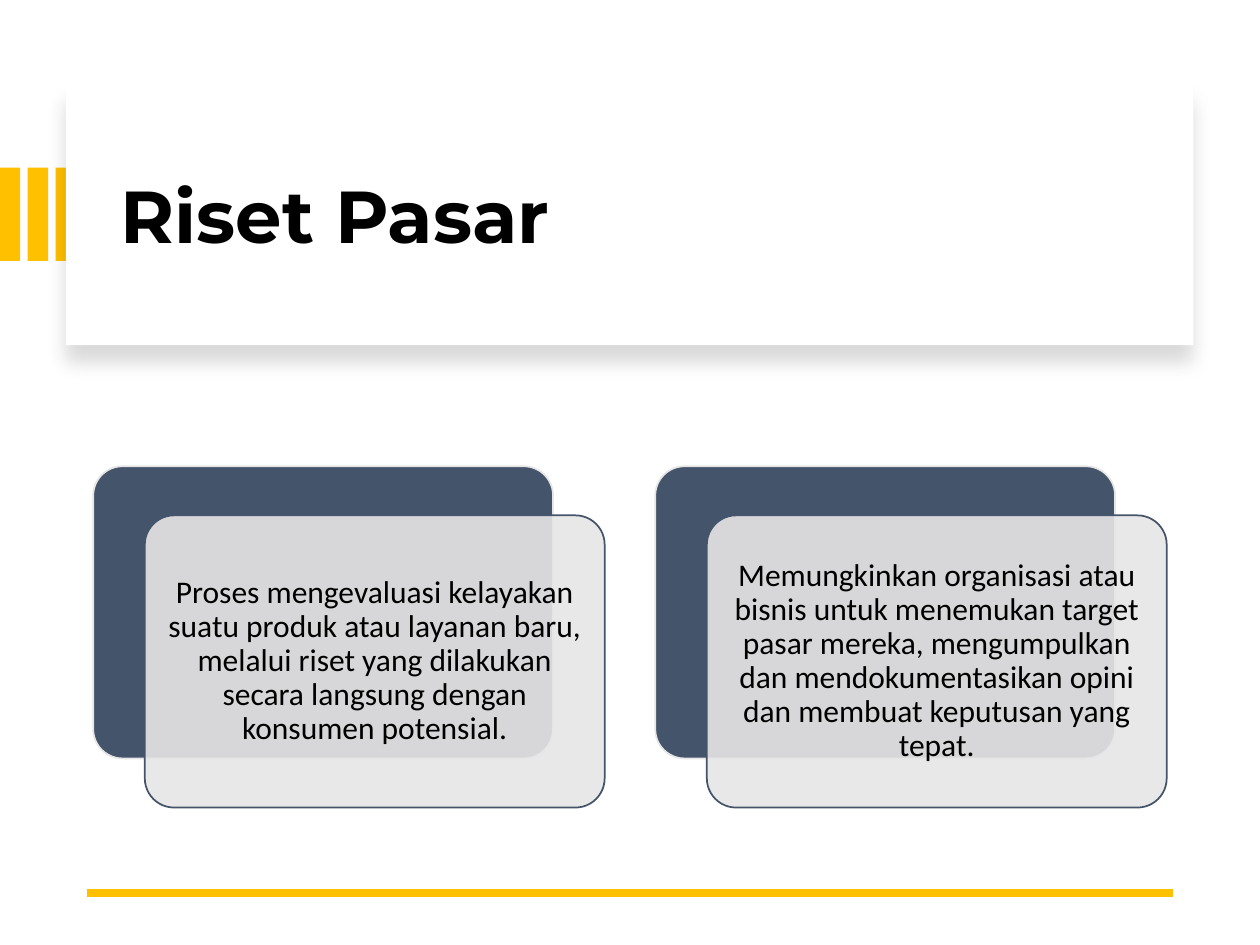
"""Build the "Riset Pasar" slide: a title panel above two layered text cards."""
from lxml import etree
from pptx import Presentation
from pptx import util as u
from pptx.dml.color import RGBColor
from pptx.enum import shapes, text
from pptx.oxml import parse_xml
from pptx.oxml.ns import qn

TITLE = "Riset Pasar"
CARDS = [
    "Proses mengevaluasi kelayakan suatu produk atau layanan baru, melalui riset "
    "yang dilakukan secara langsung dengan konsumen potensial.",
    "Memungkinkan organisasi atau bisnis untuk menemukan target pasar mereka, "
    "mengumpulkan dan mendokumentasikan opini dan membuat keputusan yang tepat.",
]
THEME = {
    "accent": "FFC000", "dark": "44546A", "light": "E7E6E6",
    "paper": "FFFFFF", "ink": "000000",
    "title_font": "Montserrat", "title_size": 42,
    "body_font": "Calibri", "body_size": 18,
}
A_NS = "http://schemas.openxmlformats.org/drawingml/2006/main"
SHADOW = (
    f'<a:effectLst xmlns:a="{A_NS}"><a:outerShdw blurRad="139700" dist="127000" '
    'dir="5400000" algn="t" rotWithShape="0"><a:srgbClr val="000000">'
    '<a:alpha val="15000"/></a:srgbClr></a:outerShdw></a:effectLst>'
)
STRIPES, STRIPE_W, STRIPE_STEP = 3, 0.41, 0.56
CARD_LEFT, CARD_TOP, CARD_STEP = 1.88, 9.4, 11.33
CARD_W, CARD_H = 9.27, 5.89
SHIFT_X, SHIFT_Y = 1.04, 0.99


def color(name):
    return RGBColor.from_string(THEME[name])


def add_box(s, kind, box, fill, line=None):
    sp = s.shapes.add_shape(kind, *map(u.Cm, box))
    sp.shadow.inherit = False
    sp.fill.solid()
    sp.fill.fore_color.rgb = color(fill)
    if line:
        sp.line.color.rgb = color(line)
        sp.line.width = u.Pt(1)
    else:
        sp.line.fill.background()
    return sp


def write(sp, words, style, align):
    tf = sp.text_frame
    tf.text = words
    tf.word_wrap = True
    tf.auto_size = text.MSO_AUTO_SIZE.NONE
    tf.vertical_anchor = text.MSO_ANCHOR.MIDDLE
    p = tf.paragraphs[0]
    p.alignment = align
    p.line_spacing = 0.9
    p.font.name = THEME[f"{style}_font"]
    p.font.size = u.Pt(THEME[f"{style}_size"])
    p.font.bold = style == "title"
    p.font.color.rgb = color("ink")
    return tf


def add_header(s):
    rect = shapes.MSO_SHAPE.RECTANGLE
    for i in range(STRIPES):
        add_box(s, rect, (i * STRIPE_STEP, 3.38, STRIPE_W, 1.88), "accent")
    panel = add_box(s, rect, (1.33, 1.7, 22.73, 5.26), "paper")
    props = panel._element.spPr
    props.replace(props.find(qn("a:effectLst")), parse_xml(SHADOW))

    title = s.shapes.title
    title.left, title.top, title.width, title.height = map(u.Cm, (2.18, 2.26, 21.18, 4.32))
    write(title, TITLE, "title", text.PP_ALIGN.LEFT)
    panel._element.addnext(title._element)


def add_rule(s):
    ends = map(u.Cm, (23.65, 18.01, 1.75, 18.01))
    rule = s.shapes.add_connector(shapes.MSO_CONNECTOR.STRAIGHT, *ends)
    rule.line.color.rgb = color("accent")
    rule.line.width = u.Pt(4.5)
    etree.SubElement(rule._element.spPr, qn("a:effectLst"))


def add_card(s, left, words):
    rounded = shapes.MSO_SHAPE.ROUNDED_RECTANGLE
    back = add_box(s, rounded, (left, CARD_TOP, CARD_W, CARD_H), "dark", "light")
    front = add_box(s, rounded, (left + SHIFT_X, CARD_TOP + SHIFT_Y, CARD_W, CARD_H),
                    "light", "dark")
    for sp in (back, front):
        sp.adjustments[0] = 0.1
    fill = front._element.spPr.find(qn("a:solidFill"))
    etree.SubElement(fill[0], qn("a:alpha"), val="90000")
    tf = write(front, words, "body", text.PP_ALIGN.CENTER)
    tf.margin_left = tf.margin_right = tf.margin_top = tf.margin_bottom = u.Cm(0.18)


def main():
    prs = Presentation()
    prs.slide_width, prs.slide_height = u.Cm(25.4), u.Cm(19.05)
    s = prs.slides.add_slide(prs.slide_layouts[5])
    add_header(s)
    add_rule(s)
    for i, words in enumerate(CARDS):
        add_card(s, CARD_LEFT + i * CARD_STEP, words)
    prs.save("out.pptx")


if __name__ == "__main__":
    main()
